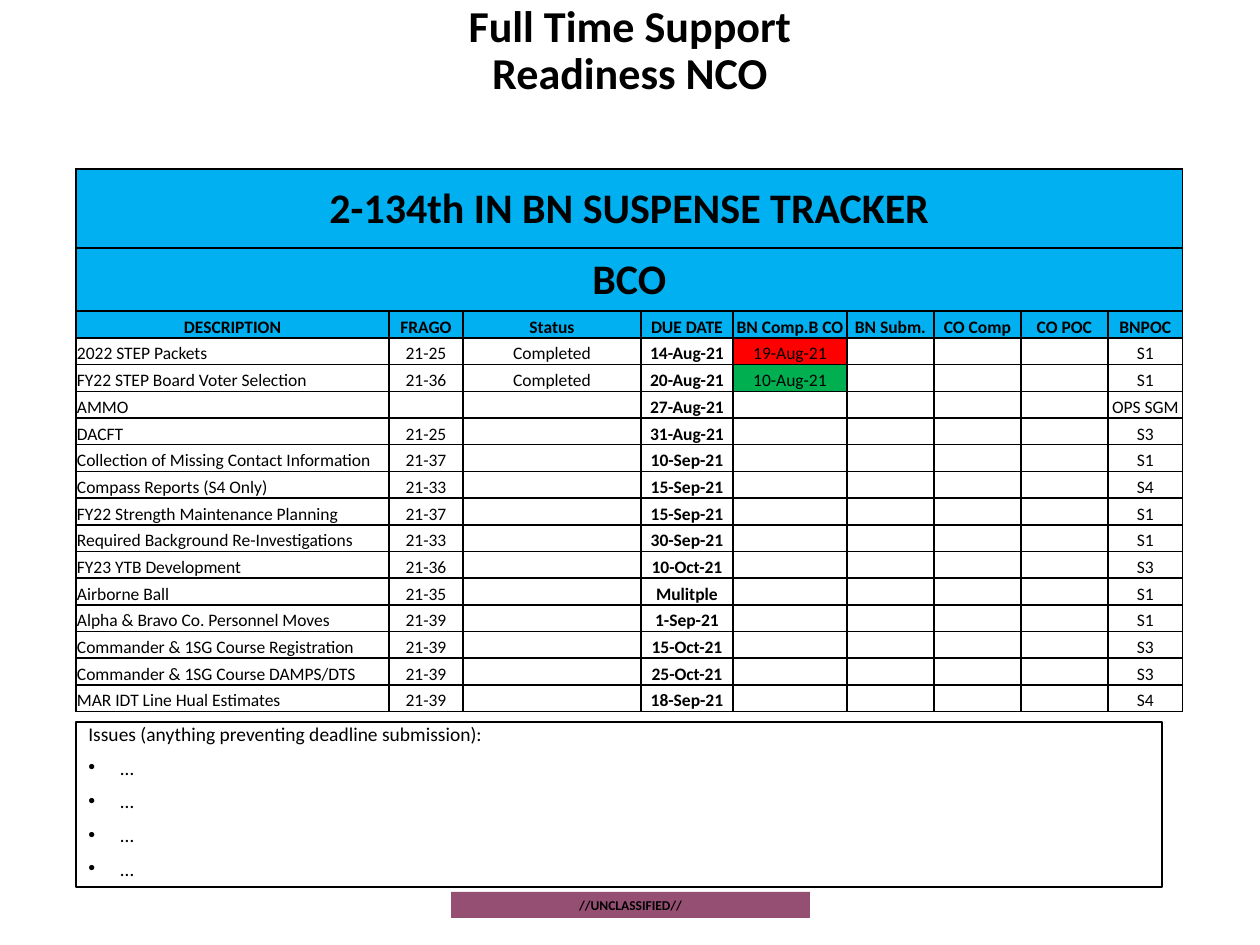
from lxml import etree
from pptx import Presentation
from pptx import util as u
from pptx.dml.color import RGBColor
from pptx.enum import shapes, text
from pptx.oxml.ns import qn

FONT = "Calibri"
BLACK = RGBColor(0, 0, 0)
BLUE = RGBColor(0x00, 0xB0, 0xF0)
RED = RGBColor(0xFF, 0x00, 0x00)
GREEN = RGBColor(0x00, 0xB0, 0x50)
PLUM = RGBColor(0x95, 0x4F, 0x72)

COLUMN_WIDTHS = [313, 74, 178, 92, 114, 87, 87, 87, 75]
DUE_COLUMN, COMPLETED_COLUMN = 3, 4
BANNERS = [("2-134th IN BN SUSPENSE TRACKER", 79), ("BCO", 63)]
HEADER_HEIGHT = 27
HEADINGS = ["DESCRIPTION", "FRAGO", "Status", "DUE DATE", "BN Comp.B CO",
            "BN Subm.", "CO Comp", "CO POC", "BNPOC"]
SUSPENSES = [
    ("2022 STEP Packets", "21-25", "Completed", "14-Aug-21", "19-Aug-21", "S1"),
    ("FY22 STEP Board Voter Selection", "21-36", "Completed", "20-Aug-21", "10-Aug-21", "S1"),
    ("AMMO", "", "", "27-Aug-21", "", "OPS SGM"),
    ("DACFT", "21-25", "", "31-Aug-21", "", "S3"),
    ("Collection of Missing Contact Information", "21-37", "", "10-Sep-21", "", "S1"),
    ("Compass Reports (S4 Only)", "21-33", "", "15-Sep-21", "", "S4"),
    ("FY22 Strength Maintenance Planning", "21-37", "", "15-Sep-21", "", "S1"),
    ("Required Background Re-Investigations", "21-33", "", "30-Sep-21", "", "S1"),
    ("FY23 YTB Development", "21-36", "", "10-Oct-21", "", "S3"),
    ("Airborne Ball", "21-35", "", "Mulitple", "", "S1"),
    ("Alpha & Bravo Co. Personnel Moves", "21-39", "", "1-Sep-21", "", "S1"),
    ("Commander & 1SG Course Registration", "21-39", "", "15-Oct-21", "", "S3"),
    ("Commander & 1SG Course DAMPS/DTS", "21-39", "", "25-Oct-21", "", "S3"),
    ("MAR IDT Line Hual Estimates", "21-39", "", "18-Sep-21", "", "S4"),
]
COMPLETED_FILLS = {"19-Aug-21": RED, "10-Aug-21": GREEN}


def px(length):
    return u.Emu(round(length * 914400 / 126))


def format_runs(paragraph, size, bold=False):
    for run in paragraph.runs:
        run.font.name = FONT
        run.font.size = u.Pt(size)
        run.font.bold = bold
        run.font.color.rgb = BLACK


def add_title(slide, left, top, width, height):
    frame = slide.shapes.add_textbox(px(left), px(top), px(width), px(height)).text_frame
    frame.word_wrap = True
    frame.vertical_anchor = text.MSO_ANCHOR.MIDDLE
    frame.text = "Full Time Support\vReadiness NCO"
    heading = frame.paragraphs[0]
    heading.alignment = text.PP_ALIGN.CENTER
    heading.line_spacing = 0.9
    format_runs(heading, 25.2, True)


def add_borders(cell):
    properties = cell._tc.get_or_add_tcPr()
    for side in ("a:lnL", "a:lnR", "a:lnT", "a:lnB"):
        line = etree.SubElement(properties, qn(side), w=str(u.Pt(1)))
        fill = etree.SubElement(line, qn("a:solidFill"))
        etree.SubElement(fill, qn("a:srgbClr"), val=str(BLACK))


def fill_cell(cell, words, size, bold, anchor, centred=True, fill=None):
    cell.margin_left = cell.margin_right = cell.margin_top = px(1)
    cell.margin_bottom = 0
    cell.vertical_anchor = anchor
    add_borders(cell)
    if fill is None:
        cell.fill.background()
    else:
        cell.fill.solid()
        cell.fill.fore_color.rgb = fill
    entry = cell.text_frame.paragraphs[0]
    entry.alignment = text.PP_ALIGN.CENTER if centred else text.PP_ALIGN.LEFT
    if words:
        entry.text = words
        format_runs(entry, size, bold)
    else:
        etree.SubElement(entry._p, qn("a:endParaRPr"), sz=str(size * 100))


def add_tracker(slide, left, top, width, height):
    first_suspense = len(BANNERS) + 1
    table = slide.shapes.add_table(
        first_suspense + len(SUSPENSES), len(COLUMN_WIDTHS),
        px(left), px(top), px(width), px(height)).table
    table.first_row = table.horz_banding = False
    for column, column_width in zip(table.columns, COLUMN_WIDTHS):
        column.width = px(column_width)

    top_heights = [banner_height for _, banner_height in BANNERS] + [HEADER_HEIGHT]
    suspense_height = (height - sum(top_heights)) / len(SUSPENSES)
    for row, row_height in zip(table.rows, top_heights + [suspense_height] * len(SUSPENSES)):
        row.height = px(row_height)

    last_column = len(COLUMN_WIDTHS) - 1
    for r, (banner, _) in enumerate(BANNERS):
        for c in range(len(COLUMN_WIDTHS)):
            fill_cell(table.cell(r, c), banner if c == 0 else "", 24, True,
                      text.MSO_ANCHOR.MIDDLE, fill=BLUE)
        table.cell(r, 0).merge(table.cell(r, last_column))

    for c, heading in enumerate(HEADINGS):
        fill_cell(table.cell(len(BANNERS), c), heading, 10, True,
                  text.MSO_ANCHOR.BOTTOM, fill=BLUE)

    for r, (*details, poc) in enumerate(SUSPENSES, first_suspense):
        entries = details + [""] * (last_column - len(details)) + [poc]
        for c, words in enumerate(entries):
            fill = COMPLETED_FILLS.get(words) if c == COMPLETED_COLUMN else None
            fill_cell(table.cell(r, c), words, 10, c == DUE_COLUMN,
                      text.MSO_ANCHOR.BOTTOM, centred=c > 0, fill=fill)


def add_box(slide, left, top, width, height):
    box = slide.shapes.add_shape(shapes.MSO_SHAPE.RECTANGLE,
                                 px(left), px(top), px(width), px(height))
    box.shadow.inherit = False
    box.text_frame.word_wrap = True
    return box


def add_issues(slide, left, top, width, height):
    box = add_box(slide, left, top, width, height)
    box.fill.background()
    box.line.color.rgb = BLACK
    box.line.width = u.Pt(0.75)
    frame = box.text_frame
    frame.vertical_anchor = text.MSO_ANCHOR.TOP
    frame.text = "\n".join(["Issues (anything preventing deadline submission):"] + ["…"] * 4)
    for i, issue in enumerate(frame.paragraphs):
        issue.alignment = text.PP_ALIGN.LEFT
        issue.line_spacing = 0.7
        if i:
            issue.space_before = u.Pt(10)
            properties = issue._p.get_or_add_pPr()
            properties.set("marL", str(px(32)))
            properties.set("indent", str(-px(32)))
            etree.SubElement(properties, qn("a:buFont"), typeface="Arial")
            etree.SubElement(properties, qn("a:buChar"), char="•")
        format_runs(issue, 11.1)


def add_classification(slide, left, top, width, height):
    box = add_box(slide, left, top, width, height)
    box.fill.solid()
    box.fill.fore_color.rgb = PLUM
    box.line.fill.background()
    frame = box.text_frame
    frame.margin_left = frame.margin_right = px(9)
    frame.margin_top = frame.margin_bottom = px(5)
    frame.vertical_anchor = text.MSO_ANCHOR.MIDDLE
    frame.text = "//UNCLASSIFIED//"
    frame.paragraphs[0].alignment = text.PP_ALIGN.CENTER
    format_runs(frame.paragraphs[0], 7.7, True)


def main():
    deck = Presentation()
    deck.slide_width, deck.slide_height = px(1260), px(945)
    slide = deck.slides.add_slide(deck.slide_layouts[6])
    add_classification(slide, 451, 892, 359, 26)
    add_title(slide, 87, 11, 1086, 81)
    add_issues(slide, 76, 722, 1086, 165)
    add_tracker(slide, 76, 169, sum(COLUMN_WIDTHS), 543)
    deck.save("out.pptx")


if __name__ == "__main__":
    main()
